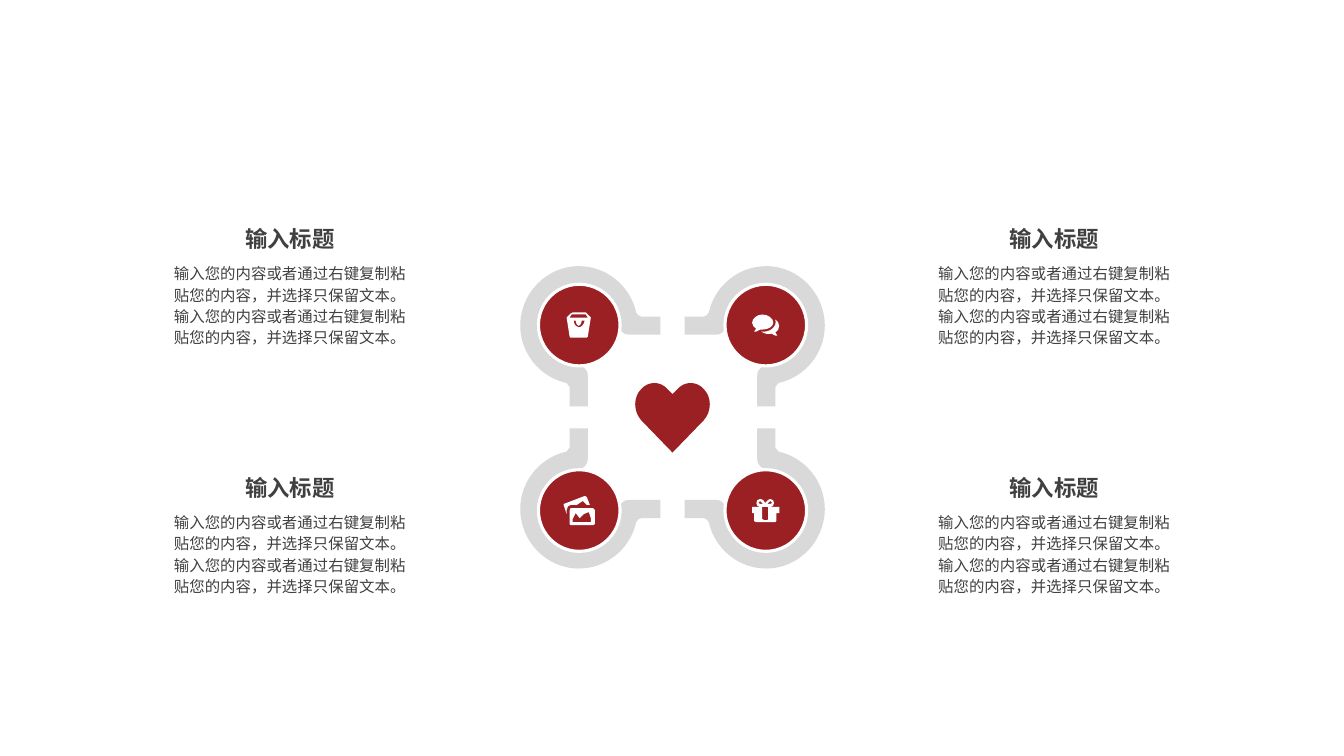
from lxml import etree
from pptx import Presentation
from pptx.dml.color import RGBColor
from pptx.enum.shapes import MSO_SHAPE
from pptx.enum.text import MSO_AUTO_SIZE, PP_ALIGN
from pptx.oxml.ns import qn
from pptx.util import Inches, Pt

FONT = "Noto Sans CJK SC"
RED, GRAY, WHITE, TEXT = "9B2024", "D9D9D9", "FFFFFF", "404040"
CENTER_X, CENTER_Y = 6.67, 4.14
HEADING = "输入标题"
SENTENCE = "输入您的内容或者通过右键复制粘贴您的内容，并选择只保留文本。"

# Outlines in inches: a pair is a straight step, six numbers are a Bezier curve
RING = [[
    (5.62, 3.8), (5.65, 3.84), (5.65, 4.03), (5.83, 4.03), (5.83, 3.73),
    (5.83, 3.65, 5.77, 3.63, 5.74, 3.63), (5.52, 3.63, 5.34, 3.45, 5.34, 3.23),
    (5.34, 3.01, 5.52, 2.83, 5.74, 2.83), (5.96, 2.83, 6.14, 3.01, 6.14, 3.23),
    (6.14, 3.25, 6.16, 3.32, 6.24, 3.32), (6.55, 3.32), (6.55, 3.14), (6.36, 3.14),
    (6.34, 3.14, 6.32, 3.12, 6.31, 3.1), (6.25, 2.83, 6.01, 2.64, 5.74, 2.64),
    (5.42, 2.64, 5.16, 2.91, 5.16, 3.23), (5.16, 3.5, 5.35, 3.74, 5.62, 3.8),
]]
BAG = [
    [(5.65, 3.15), (5.67, 3.12), (5.81, 3.12), (5.83, 3.15)],
    [(5.69, 3.18), (5.71, 3.18), (5.72, 3.25, 5.76, 3.25, 5.77, 3.18), (5.8, 3.18),
     (5.78, 3.27, 5.7, 3.27, 5.69, 3.18)],
    [(5.85, 3.14), (5.82, 3.11), (5.81, 3.1), (5.68, 3.1), (5.66, 3.11), (5.63, 3.14),
     (5.62, 3.15), (5.65, 3.34), (5.66, 3.35), (5.82, 3.35), (5.83, 3.34), (5.86, 3.15)],
]
PHOTOS = [
    [(5.86, 5.18), (5.68, 5.18), (5.68, 5.15), (5.71, 5.09), (5.75, 5.14), (5.79, 5.1),
     (5.84, 5.08), (5.86, 5.14)],
    [(5.88, 5.04), (5.66, 5.04), (5.65, 5.06), (5.65, 5.2), (5.66, 5.21), (5.88, 5.21),
     (5.9, 5.2), (5.9, 5.06)],
    [(5.85, 5.01), (5.82, 4.93), (5.8, 4.92), (5.59, 5), (5.59, 5.01), (5.62, 5.1), (5.62, 5.06),
     (5.62, 5.03, 5.64, 5.01, 5.66, 5.01), (5.72, 5.01), (5.78, 4.97), (5.82, 5.01)],
]
GIFT = [
    [(7.64, 4.97), (7.63, 4.98), (7.61, 5), (7.64, 5), (7.66, 4.99)],
    [(7.62, 5.15), (7.62, 5.03), (7.56, 5.03), (7.56, 5.15), (7.58, 5.16), (7.61, 5.16)],
    [(7.57, 5), (7.55, 4.98), (7.54, 4.97), (7.52, 4.99), (7.54, 5)],
    [(7.73, 5.09), (7.7, 5.09), (7.7, 5.17), (7.69, 5.18), (7.5, 5.18), (7.48, 5.17),
     (7.48, 5.09), (7.46, 5.09), (7.46, 5.03), (7.54, 5.03),
     (7.49, 5.03, 7.49, 4.95, 7.54, 4.95), (7.57, 4.96), (7.59, 4.99), (7.62, 4.96),
     (7.64, 4.95), (7.69, 4.95, 7.69, 5.03, 7.64, 5.03), (7.73, 5.03)],
]
CHAT = [
    [(7.69, 3.3), (7.71, 3.33), (7.69, 3.33), (7.65, 3.31),
     (7.62, 3.32, 7.58, 3.31, 7.55, 3.29), (7.64, 3.3, 7.71, 3.24, 7.69, 3.17),
     (7.74, 3.2, 7.74, 3.27, 7.69, 3.3)],
    [(7.56, 3.27), (7.54, 3.27), (7.5, 3.29), (7.48, 3.29), (7.5, 3.26),
     (7.47, 3.24, 7.46, 3.22, 7.46, 3.2), (7.46, 3.16, 7.51, 3.12, 7.56, 3.12),
     (7.62, 3.12, 7.67, 3.16, 7.67, 3.2), (7.67, 3.24, 7.62, 3.27, 7.56, 3.27)],
]
HEART = [[
    (6.98, 3.86), (6.91, 3.78, 6.79, 3.78, 6.72, 3.86), (6.67, 3.91), (6.62, 3.86),
    (6.55, 3.78, 6.43, 3.78, 6.36, 3.86), (6.28, 3.94, 6.28, 4.08, 6.36, 4.17), (6.67, 4.49),
    (6.98, 4.17), (7.06, 4.08, 7.06, 3.94, 6.98, 3.86),
]]

presentation = Presentation()
presentation.slide_width = Inches(13.33)
presentation.slide_height = Inches(7.5)
slide = presentation.slides.add_slide(presentation.slide_layouts[6])


def color(hex_value):
    return RGBColor.from_string(hex_value)


def add_outline(contours, fill, flip_x=1, flip_y=1):
    """Draw contours as one freeform; a flip of -1 mirrors it about the centre."""
    placed = [[[(Inches(CENTER_X + flip_x * (step[i] - CENTER_X)),
                 Inches(CENTER_Y + flip_y * (step[i + 1] - CENTER_Y)))
                for i in range(0, len(step), 2)] for step in contour] for contour in contours]
    builder = slide.shapes.build_freeform(*placed[0][0][0])
    for number, contour in enumerate(placed):
        if number:
            builder.move_to(*contour[0][0])
        builder.add_line_segments([step[-1] for step in contour[1:]], close=True)
    shape = builder.convert_to_shape()

    # Turn the steps that have control points into Bezier curves
    steps = [step for contour in placed for step in contour[1:]]
    segments = list(shape._element.iter(qn("a:lnTo")))
    for step, segment in zip(steps, segments):
        if len(step) == 3:
            segment.tag = qn("a:cubicBezTo")
            for position, (x, y) in enumerate(step[:2]):
                control = etree.Element(qn("a:pt"), x=str(x - shape.left), y=str(y - shape.top))
                segment.insert(position, control)

    shape.shadow.inherit = False
    shape.fill.solid()
    shape.fill.fore_color.rgb = color(fill)
    shape.line.fill.background()


# Gray rings, mirrored into the four corners
for flip_x in (1, -1):
    for flip_y in (1, -1):
        add_outline(RING, GRAY, flip_x, flip_y)

# Red discs with white icons
for left, top, icon in ((5.34, 2.82, BAG), (5.34, 4.66, PHOTOS),
                        (7.19, 4.66, GIFT), (7.19, 2.82, CHAT)):
    disc = slide.shapes.add_shape(MSO_SHAPE.OVAL, Inches(left), Inches(top),
                                  Inches(0.81), Inches(0.81))
    disc.shadow.inherit = False
    disc.fill.solid()
    disc.fill.fore_color.rgb = color(RED)
    disc.line.color.rgb = color(WHITE)
    disc.line.width = Pt(2.25)
    add_outline(icon, WHITE)

# Heart in the middle
add_outline(HEART, RED)

# Heading and body text beside each disc
for left in (1.6, 9.18):
    for top in (2.18, 4.65):
        for text, x, y, width, height, size, bold, spacing in (
                (HEADING, left + 0.11, top, 2.33, 0.37, 16, True, 1.0),
                (SENTENCE * 2, left, top + 0.37, 2.55, 0.93, 11, False, 1.14)):
            box = slide.shapes.add_textbox(Inches(x), Inches(y), Inches(width), Inches(height))
            box.text_frame.word_wrap = True
            box.text_frame.auto_size = MSO_AUTO_SIZE.SHAPE_TO_FIT_TEXT
            paragraph = box.text_frame.paragraphs[0]
            paragraph.text = text
            paragraph.alignment = PP_ALIGN.CENTER
            paragraph.line_spacing = spacing
            paragraph.font.name = FONT
            paragraph.font.size = Pt(size)
            paragraph.font.bold = bold
            paragraph.font.color.rgb = color(TEXT)
            defaults = paragraph._p.pPr.find(qn("a:defRPr"))
            etree.SubElement(defaults, qn("a:ea"), typeface=FONT)

presentation.save("out.pptx")
